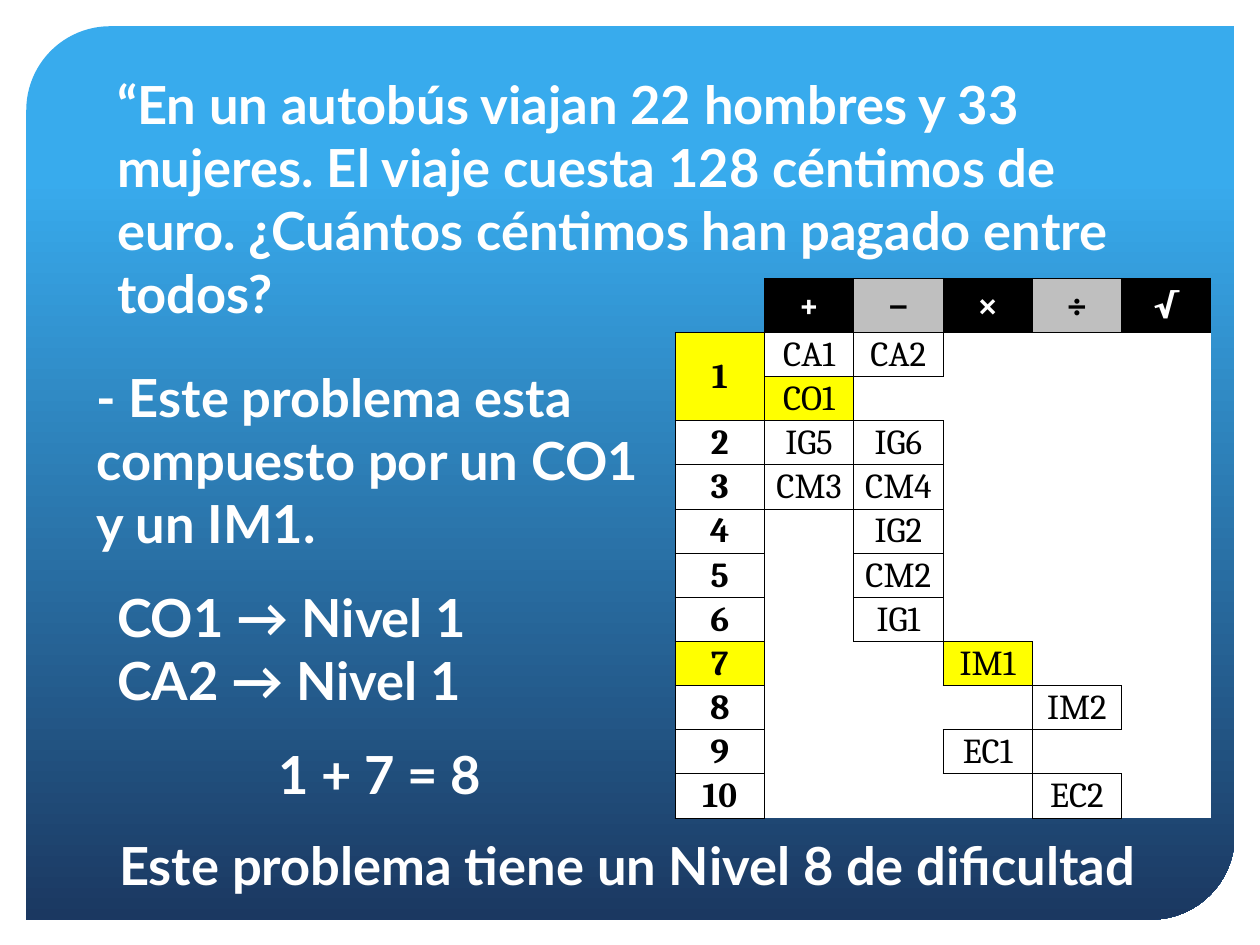
from pptx import Presentation
from pptx.dml.color import RGBColor as RGB
from pptx.enum.shapes import MSO_SHAPE as Shape
from pptx.enum.text import MSO_ANCHOR as Anchor, PP_ALIGN as Align
from pptx.oxml import parse_xml
from pptx.oxml.ns import nsdecls
from pptx.util import Cm, Pt

WHITE = RGB(255, 255, 255)
BLACK = RGB(0, 0, 0)
GRAY = RGB(0xBF, 0xBF, 0xBF)
YELLOW = RGB(255, 255, 0)
SKY = RGB(0x38, 0xAB, 0xED)
NAVY = RGB(0x1B, 0x38, 0x61)


def style(para, face, size, color, bold, align):
    para.alignment = align
    font = para.font
    font.name, font.size, font.bold = face, Pt(size), bold
    font.color.rgb = color


def edge(cell, index, side, drawn):
    paint = '<a:solidFill><a:srgbClr val="000000"/></a:solidFill>' if drawn else "<a:noFill/>"
    line = parse_xml(f'<a:ln{side} {nsdecls("a")} w="6350">{paint}</a:ln{side}>')
    cell._tc.get_or_add_tcPr().insert(index, line)


deck = Presentation()
deck.slide_width, deck.slide_height = Cm(25.4), Cm(19.05)
slide = deck.slides.add_slide(deck.slide_layouts[6])

# Background panel
panel = slide.shapes.add_shape(Shape.ROUND_2_DIAG_RECTANGLE, Cm(0.53), Cm(0.53), Cm(24.36), Cm(18.01))
panel.adjustments[0], panel.adjustments[1] = 0.094, 0
panel.shadow.inherit = False
panel.line.fill.background()
panel.fill.gradient()
panel.fill.gradient_angle = 270
for stop, color, place in zip(panel.fill.gradient_stops, (SKY, NAVY), (0.17, 1)):
    stop.color.rgb, stop.position = color, place

# Problem and solution texts
texts = [
    (1.7, 7.24, 11.91, 4.11, Align.LEFT, ["- Este problema esta compuesto por un CO1 y un IM1."]),
    (2.11, 11.66, 8.15, 2.82, Align.LEFT, ["CO1 → Nivel 1", "CA2 → Nivel 1"]),
    (3.58, 14.83, 8.15, 1.55, Align.CENTER, ["1 + 7 = 8"]),
    (0.51, 16.66, 24.28, 1.55, Align.CENTER, ["Este problema tiene un Nivel 8 de dificultad"]),
    (2.11, 1.32, 21.41, 5.38, Align.LEFT,
     ["“En un autobús viajan 22 hombres y 33 mujeres. El viaje cuesta 128 céntimos de euro. "
      "¿Cuántos céntimos han pagado entre todos?"]),
]
for left, top, width, height, align, lines in texts:
    frame = slide.shapes.add_textbox(Cm(left), Cm(top), Cm(width), Cm(height)).text_frame
    frame.word_wrap = True
    frame.text = "\n".join(lines)
    for para in frame.paragraphs:
        style(para, "Lato", 30, WHITE, True, align)

# Table of levels by operation
rows = [
    ["", "+", "−", "×", "÷", "√"],
    ["1", "CA1", "CA2", "", "", ""],
    ["1", "CO1", "", "", "", ""],
    ["2", "IG5", "IG6", "", "", ""],
    ["3", "CM3", "CM4", "", "", ""],
    ["4", "", "IG2", "", "", ""],
    ["5", "", "CM2", "", "", ""],
    ["6", "", "IG1", "", "", ""],
    ["7", "", "", "IM1", "", ""],
    ["8", "", "", "", "IM2", ""],
    ["9", "", "", "EC1", "", ""],
    ["10", "", "", "", "EC2", ""],
]
marked = {"1", "7", "CO1", "IM1"}
high, wide = len(rows), len(rows[0])
filled = {(r, c) for r in range(high) for c in range(wide) if rows[r][c]}
grid = slide.shapes.add_table(high, wide, Cm(13.61), Cm(5.61), Cm(10.82), Cm(10.8)).table
grid.first_row = grid.horz_banding = False
for col in grid.columns:
    col.width = Cm(1.8)
for r, row in enumerate(grid.rows):
    row.height = Cm(0.89 if r else 1.09)
grid.cell(1, 0).merge(grid.cell(2, 0))

for r, row in enumerate(rows):
    for c, word in enumerate(row):
        cell = grid.cell(r, c)
        cell.margin_left = cell.margin_right = cell.margin_top = Cm(0.02)
        cell.margin_bottom = 0
        cell.vertical_anchor = Anchor.MIDDLE
        if r == 0:
            back = GRAY if c in (2, 4) else BLACK
        else:
            back = YELLOW if word in marked else WHITE
        if r or c:
            cell.fill.solid()
            cell.fill.fore_color.rgb = back
        else:
            cell.fill.background()
        if word and not cell.is_spanned:
            cell.text = word
            ink = WHITE if back == BLACK else BLACK
            style(cell.text_frame.paragraphs[0], "Cambria", 20, ink, r == 0 or c == 0, Align.CENTER)
        # An edge is drawn when a cell on either side of it holds text
        near = {"L": (r, c - 1), "R": (r, c + 1), "T": (r - 1, c), "B": (r + 1, c)}
        for index, (side, spot) in enumerate(near.items()):
            edge(cell, index, side, bool(filled & {(r, c), spot}))

deck.save("out.pptx")
